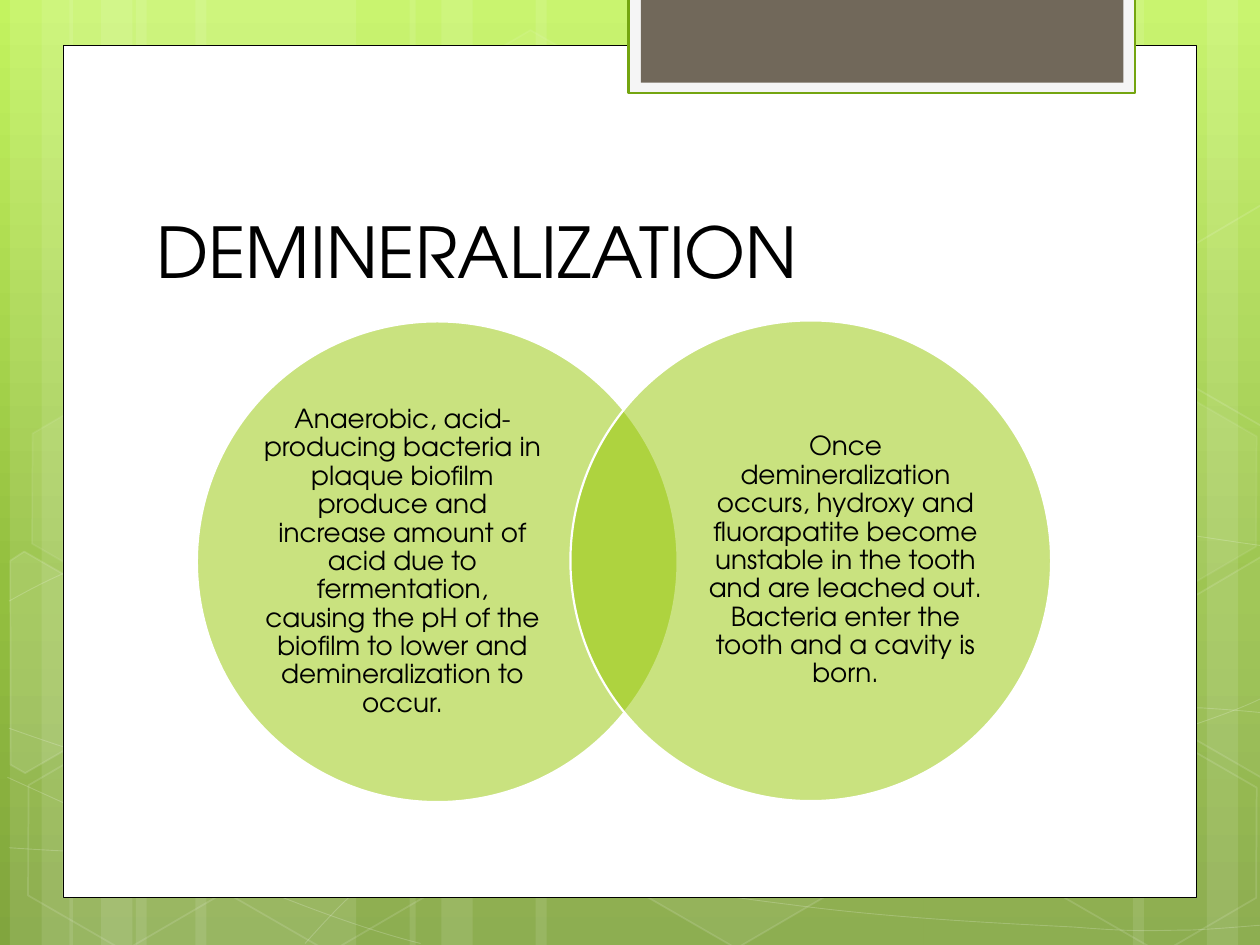
from lxml.etree import SubElement
from copy import deepcopy
from pptx import Presentation
from pptx.dml.color import RGBColor
from pptx.enum.shapes import MSO_SHAPE
from pptx.enum.text import MSO_ANCHOR, MSO_AUTO_SIZE, PP_ALIGN
from pptx.oxml.ns import qn
from pptx.util import Cm, Pt

WHITE = RGBColor(0xFF, 0xFF, 0xFF)
BLACK = RGBColor(0, 0, 0)
LIME = RGBColor(0x94, 0xC6, 0x00)
MOSS = RGBColor(0x74, 0xA5, 0x10)
PALE = RGBColor(0xF5, 0xF5, 0xF5)
BROWN = RGBColor(0x71, 0x68, 0x5A)
SKY = [(0, RGBColor(0xC3, 0xF3, 0x5F)),
       (0.62, RGBColor(0x93, 0xBF, 0x3F)),
       (1, RGBColor(0x81, 0xA5, 0x3E))]
FONT = "TeX Gyre Adventor"

# Each wave is a start point followed by Bezier triples, in cm
WAVES = [
    [(0.18, 17.09), (1.37, 17.17), (2.92, 17.25), (4.83, 17.22),
     (6.73, 17.2), (9.09, 17.15), (11.63, 16.89),
     (14.17, 16.64), (17.78, 16.15), (20.12, 15.67),
     (22.43, 15.19), (24.82, 14.43), (25.58, 14)],
    [(0.18, 12.12), (0.91, 11.71), (1.65, 11.33), (3.07, 10.95),
     (4.52, 10.57), (6.58, 10.01), (8.81, 9.83),
     (11.07, 9.65), (13.82, 9.63), (16.61, 9.83),
     (19.41, 10.03), (24.05, 10.82), (25.58, 11.02)],
    [(0.15, 15.67), (3.23, 17.07), (6.27, 18.47), (8.48, 19.02)],
    [(0.18, 14.68), (0.97, 14.96), (1.78, 15.24), (3.25, 15.65),
     (4.72, 16.03), (6.93, 16.66), (9.07, 17.09),
     (11.18, 17.53), (13.84, 17.98), (15.95, 18.24),
     (18.06, 18.52), (20.32, 18.62), (21.67, 18.69),
     (22.99, 18.8), (23.34, 18.75), (24, 18.75),
     (24.66, 18.72), (25.12, 18.67), (25.58, 18.64)],
    [(6.15, 19.02), (6.6, 18.52), (7.06, 18.01), (7.67, 17.55),
     (8.28, 17.09), (9.14, 16.59), (9.86, 16.23),
     (10.57, 15.88), (11, 15.72), (11.94, 15.47),
     (12.85, 15.21), (14.55, 14.86), (15.44, 14.68),
     (16.36, 14.5), (16.48, 14.5), (17.27, 14.45),
     (18.06, 14.38), (19.3, 14.3), (20.17, 14.27),
     (21.06, 14.25), (22.5, 14.27), (22.5, 14.27),
     (23.07, 14.27), (23.64, 14.27), (24.21, 14.27),
     (24.66, 14.3), (25.1, 14.33), (25.55, 14.38)],
]
# Left, top, fill opacity, line opacity
HEXES = [(8.48, 0.91, 4, 8), (12.62, 14.96, 6, 12), (0.28, 15.01, 0, 12),
         (0.36, 7.92, 7, 8), (4.42, 15.04, 0, 12), (19.13, 11.51, 10, 12),
         (21.18, 15.06, 0, 12), (21.18, 7.98, 7, 8)]
# Hexagons cut by the slide edge, before they are turned
LEFT_CUT = [(0, 0.3), (0.15, 0), (2.4, 0), (3.5, 1.95), (2.4, 3.86), (2.06, 3.86)]
RIGHT_CUT = [(0, 1.93), (1.09, 0), (1.32, 0), (3.45, 3.68), (3.35, 3.86), (1.12, 3.86)]
CUTS = [(LEFT_CUT, -0.84, 11.66, 10), (RIGHT_CUT, 23.29, 11.28, 4),
        (RIGHT_CUT, 23.29, 4.19, 0)]

CAUSE = ("Anaerobic, acid-producing bacteria in plaque biofilm produce and "
         "increase amount of acid due to fermentation, causing the pH of the "
         "biofilm to lower and demineralization to occur.")
RESULT = ("Once demineralization occurs, hydroxy and fluorapatite become "
          "unstable in the tooth and are leached out. Bacteria enter the "
          "tooth and a cavity is born.")


def fade(part, alpha):
    """Set the opacity, in percent, of a solid fill held by an XML part."""
    color = part.find(qn("a:solidFill")).find(qn("a:srgbClr"))
    SubElement(color, qn("a:alpha")).set("val", str(alpha * 1000))


def paint(shape, fill=None, alpha=100, line=None, width=1, dim=100):
    """Style a shape; alpha and dim are the fill and line opacity."""
    shape.shadow.inherit = False
    props = shape.element.spPr
    if fill is None or alpha == 0:
        shape.fill.background()
    else:
        shape.fill.solid()
        shape.fill.fore_color.rgb = fill
        if alpha < 100:
            fade(props, alpha)
    if line is None:
        shape.line.fill.background()
    else:
        shape.line.color.rgb = line
        shape.line.width = Pt(width)
        if dim < 100:
            fade(props.find(qn("a:ln")), dim)


def add_form(slide, kind, left, top, width, height):
    return slide.shapes.add_shape(kind, Cm(left), Cm(top), Cm(width), Cm(height))


def add_path(slide, points, left, top, close):
    spots = [(Cm(left + x), Cm(top + y)) for x, y in points]
    pen = slide.shapes.build_freeform(*spots[0])
    pen.add_line_segments(spots[1:], close=close)
    return pen.convert_to_shape()


def bend(shape):
    """Turn each three line segments of an outline into one Bezier."""
    steps = list(shape.element.iter(qn("a:lnTo")))
    route = steps[0].getparent()
    for i in range(0, len(steps), 3):
        curve = SubElement(route, qn("a:cubicBezTo"))
        for step in steps[i:i + 3]:
            curve.append(step[0])
            route.remove(step)


def set_sky(slide):
    """Give the slide its vertical three-stop gradient."""
    fill = slide.background.fill
    fill.gradient()
    fill.gradient_angle = 270
    stops = next(slide.element.iter(qn("a:gsLst")))
    stops.append(deepcopy(stops[0]))
    for stop, (place, color) in zip(fill.gradient_stops, SKY):
        stop.position = place
        stop.color.rgb = color


def add_bands(slide, left, top, height):
    """Place four sets of a thin, a middle and a wide stripe."""
    for base, wide, sign in ((0.2, 4.44, 1), (1.4, 4.44, 1),
                             (25.6, 4.44, -1), (8.26, 7.82, 1)):
        for gap, width in ((2.54, wide), (0, 1.27), (0.64, 2.12)):
            start = base + gap if sign > 0 else base - gap - width
            band = add_form(slide, MSO_SHAPE.RECTANGLE, left + start, top, width, height)
            paint(band, WHITE, 10)


def add_decor(slide, left, top):
    """Place the faint waves and hexagons."""
    for wave in WAVES:
        curve = add_path(slide, wave, left, top, False)
        bend(curve)
        paint(curve, line=WHITE, width=0.5, dim=20)
    for x, y, alpha, dim in HEXES:
        cell = add_form(slide, MSO_SHAPE.HEXAGON, left + x, top + y, 4.44, 3.86)
        cell.adjustments[0] = 0.285
        cell.rotation = 30
        paint(cell, WHITE, alpha, WHITE, 1, dim)
    for cut, x, y, alpha in CUTS:
        cell = add_path(slide, cut, left + x, top + y, True)
        cell.rotation = 30
        paint(cell, WHITE, alpha, WHITE, 1, 12)


def add_panel(slide, left, top, width, height):
    """Place the white sheet and the tab hanging over its top edge."""
    sheet = add_form(slide, MSO_SHAPE.RECTANGLE, left, top, width, height)
    paint(sheet, WHITE, line=BLACK, width=0.5)
    tab = add_form(slide, MSO_SHAPE.RECTANGLE, left + 11.4, top - 0.96, 10.22, 1.93)
    paint(tab, PALE, line=MOSS, width=1.25)
    core = add_form(slide, MSO_SHAPE.RECTANGLE, left + 11.65, top - 0.96, 9.73, 1.72)
    paint(core, BROWN)


def sink(slide):
    """Move the backdrop shapes from the slide to its layout."""
    for shape in list(slide.shapes):
        if not shape.is_placeholder:
            slide.slide_layout.shapes.element.append(shape.element)


def style(para, size, align):
    para.alignment = align
    for run in para.runs:
        run.font.name = FONT
        run.font.size = Pt(size)
        run.font.color.rgb = BLACK


def set_title(slide, text, left, top, width, height):
    title = slide.shapes.title
    title.left, title.top, title.width, title.height = map(Cm, (left, top, width, height))
    frame = title.text_frame
    frame.text = text
    frame.auto_size = MSO_AUTO_SIZE.NONE
    frame.vertical_anchor = MSO_ANCHOR.BOTTOM
    style(frame.paragraphs[0], 40, PP_ALIGN.LEFT)


def add_venn(slide, left, top, size):
    """Place two overlapping circles, each with its text."""
    for text, shift, rise, inset in ((CAUSE, 0, 0, 1.35), (RESULT, 7.53, 0.02, 2.75)):
        disc = add_form(slide, MSO_SHAPE.OVAL, left + shift, top - rise, size, size)
        paint(disc, LIME, 50, WHITE, 1.25)
        box = slide.shapes.add_textbox(Cm(left + shift + inset), Cm(top - rise + 1.14),
                                       Cm(5.59), Cm(7.42))
        frame = box.text_frame
        frame.word_wrap = True
        frame.vertical_anchor = MSO_ANCHOR.MIDDLE
        frame.margin_left = frame.margin_right = Cm(0)
        frame.margin_top = frame.margin_bottom = Cm(0)
        frame.text = text
        frame.paragraphs[0].line_spacing = 0.9
        style(frame.paragraphs[0], 15, PP_ALIGN.CENTER)


def main():
    deck = Presentation()
    deck.slide_width, deck.slide_height = Cm(25.4), Cm(19.05)
    slide = deck.slides.add_slide(deck.slide_layouts[5])
    set_sky(slide)
    add_bands(slide, 0, 0, 19.05)
    add_decor(slide, 0, 0)
    add_panel(slide, 1.27, 0.91, 22.86, 17.19)
    sink(slide)
    set_title(slide, "DEMINERALIZATION", 2.9, 2.84, 19.51, 3.18)
    add_venn(slide, 3.97, 6.48, 9.69)
    deck.save("out.pptx")


if __name__ == "__main__":
    main()
